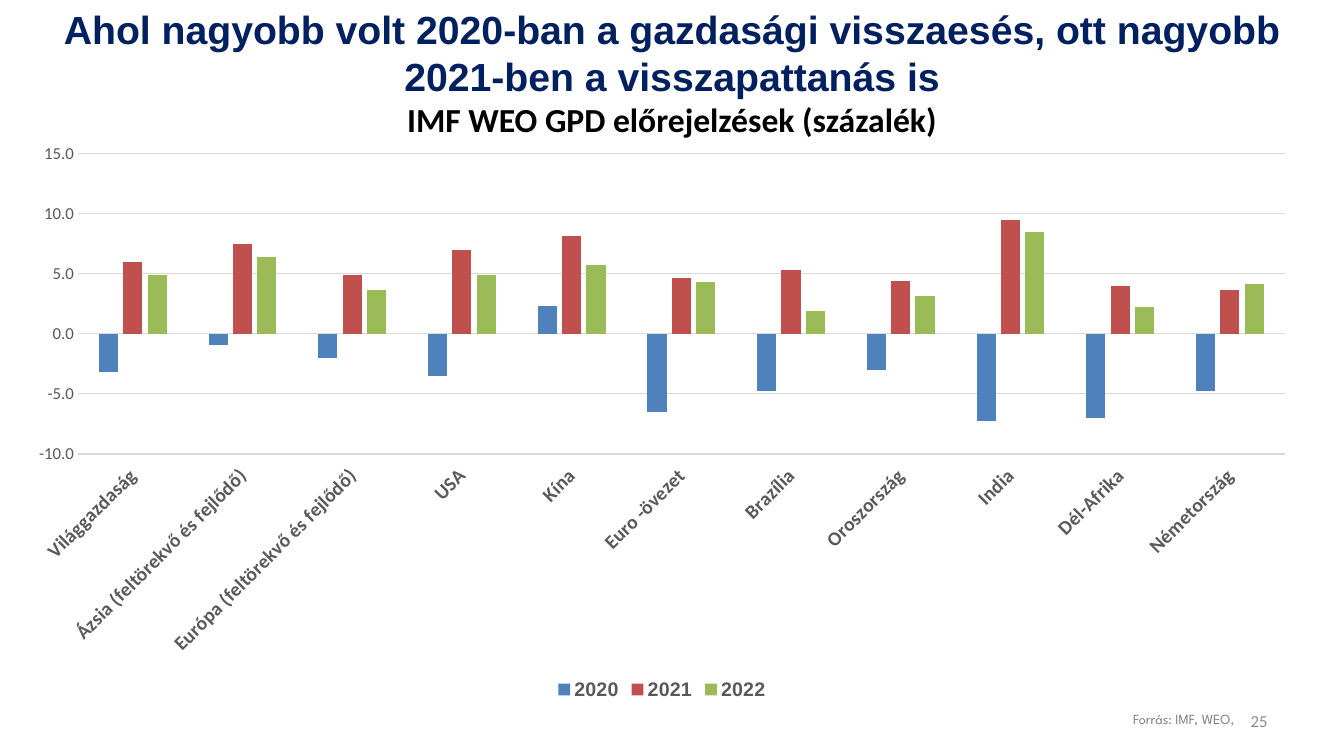
from dataclasses import dataclass

from pptx import Presentation
from pptx.chart.data import CategoryChartData as Data
from pptx.dml.color import RGBColor as RGB
from pptx.enum.chart import XL_CHART_TYPE as Kind
from pptx.enum.chart import XL_LEGEND_POSITION as Place
from pptx.enum.chart import XL_TICK_LABEL_POSITION as Label
from pptx.enum.chart import XL_TICK_MARK as Tick
from pptx.enum.text import MSO_ANCHOR as Anchor
from pptx.enum.text import PP_ALIGN as Align
from pptx.util import Inches, Pt


@dataclass(frozen=True)
class Theme:
    navy: str = "002060"
    black: str = "000000"
    text: str = "595959"
    source: str = "7F7F7F"
    number: str = "8C8C8C"
    grid: str = "D9D9D9"
    bars: tuple = ("4F81BD", "C0504D", "9BBB59")
    head: int = 28
    sub: int = 24
    label: int = 14
    small: int = 12
    tiny: int = 10
    sans: str = "Arial"
    body: str = "Calibri"
    note: str = "League Spartan"


THEME = Theme()

AREAS = [
    "Világgazdaság", "Ázsia (feltörekvő és fejlődő)",
    "Európa (feltörekvő és fejlődő)", "USA", "Kína", "Euro -övezet",
    "Brazília", "Oroszország", "India", "Dél-Afrika", "Németország",
]
GROWTH = {
    "2020": (-3.2, -0.9, -2, -3.5, 2.3, -6.5, -4.8, -3, -7.3, -7, -4.8),
    "2021": (6, 7.5, 4.9, 7, 8.1, 4.6, 5.3, 4.4, 9.5, 4, 3.6),
    "2022": (4.9, 6.4, 3.6, 4.9, 5.7, 4.3, 1.9, 3.1, 8.5, 2.2, 4.1),
}


def assign(item, **values):
    for name, value in values.items():
        setattr(item, name, value)


def style(font, size, face, color, bold=False):
    assign(font, size=Pt(size), name=face, bold=bold)
    font.color.rgb = RGB.from_string(color)


def draw_line(line, color):
    line.color.rgb = RGB.from_string(color)
    line.width = Pt(0.75)


def add_text(slide, area, runs, align, anchor=Anchor.TOP):
    frame = slide.shapes.add_textbox(*map(Inches, area)).text_frame
    assign(frame, word_wrap=True, vertical_anchor=anchor)
    para = frame.paragraphs[0]
    para.alignment = align
    for index, (text, *look) in enumerate(runs):
        if index:
            para.add_line_break()
        run = para.add_run()
        run.text = text
        style(run.font, *look)


def set_axes(chart):
    cat, val = chart.category_axis, chart.value_axis
    for axis in (cat, val):
        assign(axis, major_tick_mark=Tick.NONE, minor_tick_mark=Tick.NONE)
    assign(cat, tick_label_position=Label.LOW, has_major_gridlines=False)
    style(cat.tick_labels.font, THEME.label, THEME.body, THEME.text, True)
    turn = cat.format.line
    draw_line(turn, THEME.grid)
    cat._element.txPr.bodyPr.set("rot", "-2700000")
    assign(val, minimum_scale=-10, maximum_scale=15, major_unit=5)
    assign(val.tick_labels, number_format="0.0", number_format_is_linked=False)
    style(val.tick_labels.font, THEME.small, THEME.body, THEME.text)
    val.format.line.fill.background()
    draw_line(val.major_gridlines.format.line, THEME.grid)


def add_bars(slide, area):
    data = Data(number_format="0.0")
    data.categories = AREAS
    for year, rates in GROWTH.items():
        data.add_series(year, rates)
    chart = slide.shapes.add_chart(
        Kind.COLUMN_CLUSTERED, *map(Inches, area), data).chart
    assign(chart, has_title=False, has_legend=True)
    style(chart.font, THEME.small, THEME.body, THEME.black)
    plot = chart.plots[0]
    assign(plot, gap_width=219, overlap=-27, vary_by_categories=False)
    for bars, color in zip(plot.series, THEME.bars):
        bars.invert_if_negative = False
        bars.format.fill.solid()
        bars.format.fill.fore_color.rgb = RGB.from_string(color)
    assign(chart.legend, position=Place.BOTTOM, include_in_layout=False)
    style(chart.legend.font, THEME.label, THEME.sans, THEME.text, True)
    set_axes(chart)


def main():
    deck = Presentation()
    assign(deck, slide_width=Inches(13.33), slide_height=Inches(7.5))
    slide = deck.slides.add_slide(deck.slide_layouts[6])
    add_text(slide, (5.72, 7, 6.62, 0.32), [
        ("Forrás: IMF, WEO,", THEME.tiny, THEME.note, THEME.source),
    ], Align.RIGHT)
    add_text(slide, (0, 0, 13.33, 1.45), [
        ("Ahol nagyobb volt 2020-ban a gazdasági visszaesés, "
         "ott nagyobb 2021-ben a visszapattanás is",
         THEME.head, THEME.sans, THEME.navy, True),
        ("IMF WEO GPD előrejelzések (százalék)",
         THEME.sub, THEME.body, THEME.black, True),
    ], Align.CENTER)
    add_bars(slide, (0.13, 1.31, 12.87, 5.68))
    add_text(slide, (9.56, 6.95, 3.11, 0.4), [
        ("25", THEME.small, THEME.body, THEME.number),
    ], Align.RIGHT, Anchor.MIDDLE)
    deck.save("out.pptx")


if __name__ == "__main__":
    main()
